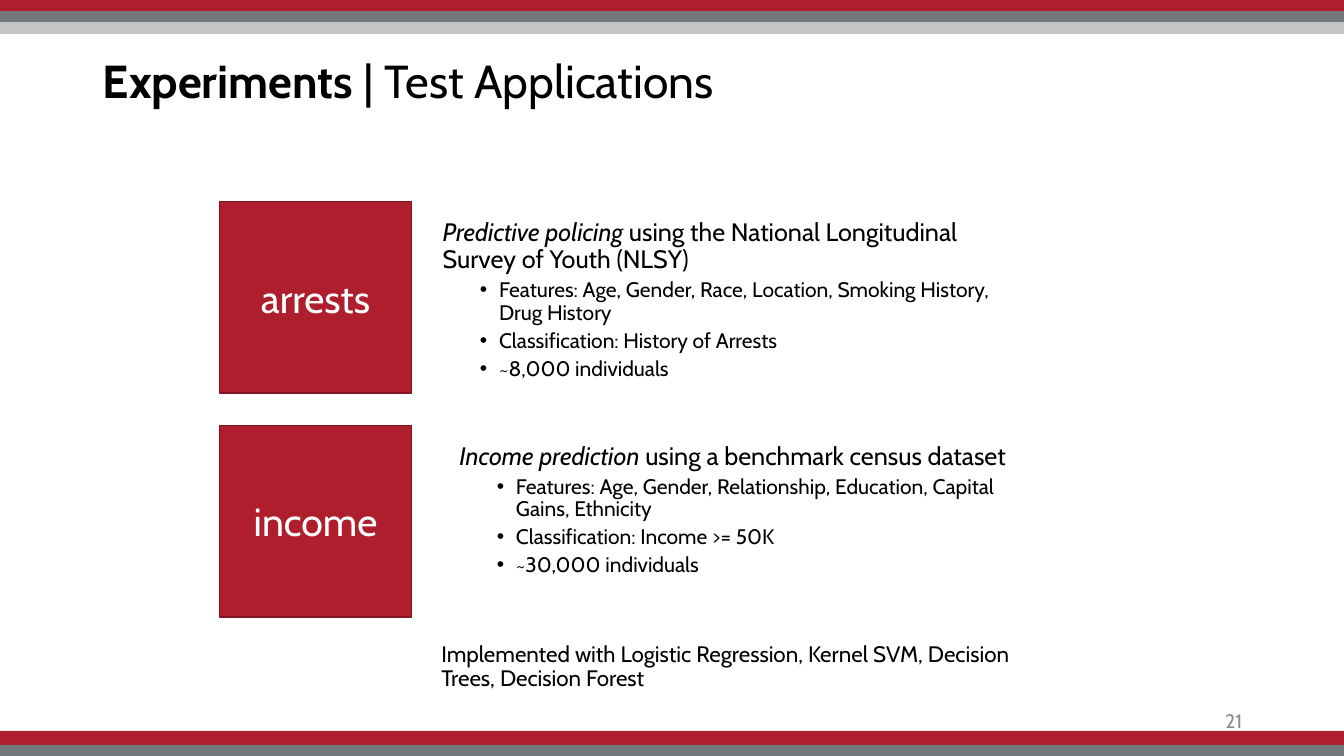
from dataclasses import dataclass

from lxml.etree import SubElement
from pptx import Presentation
from pptx.dml.color import RGBColor as Color
from pptx.enum.shapes import MSO_SHAPE as Preset
from pptx.enum.text import MSO_ANCHOR as Anchor, MSO_AUTO_SIZE as AutoSize, PP_ALIGN as Align
from pptx.oxml.ns import qn
from pptx.util import Inches, Pt


@dataclass(frozen=True)
class Theme:
    font: str = "Cabin"
    red: str = "AF1E2D"
    dark_red: str = "811621"
    gray: str = "75787B"
    light_gray: str = "C5C5C5"
    number_gray: str = "8C8C8C"
    black: str = "000000"
    white: str = "FFFFFF"
    title: int = 33
    card: int = 28
    lead: int = 18
    note: int = 16
    bullet: int = 15
    number: int = 14


class SlideBuilder:
    """Places elements on a grid of 100 columns by 100 rows."""

    def __init__(self, presentation, theme):
        self.theme = theme
        self.column = presentation.slide_width / 100
        self.row = presentation.slide_height / 100
        self.slide = presentation.slides.add_slide(presentation.slide_layouts[1])

    def box(self, left, top, width, height):
        return (round(left * self.column), round(top * self.row),
                round(width * self.column), round(height * self.row))

    def style(self, paragraph, size, color, align=Align.LEFT, spacing=None, before=0):
        font = paragraph.font
        font.name, font.size = self.theme.font, Pt(size)
        font.color.rgb = Color.from_string(color)
        paragraph.alignment = align
        paragraph.line_spacing = spacing
        paragraph.space_before = Pt(before)

    def emphasis(self, paragraph, strong, rest, attribute):
        for text, value in ((strong, True), (rest, False)):
            run = paragraph.add_run()
            run.text = text
            setattr(run.font, attribute, value)

    def rectangle(self, area, fill, line=None):
        shape = self.slide.shapes.add_shape(Preset.RECTANGLE, *self.box(*area))
        shape.shadow.inherit = False
        shape.fill.solid()
        shape.fill.fore_color.rgb = Color.from_string(fill)
        if line:
            shape.line.color.rgb = Color.from_string(line)
            shape.line.width = Pt(1)
        else:
            shape.line.fill.background()
        return shape

    def card(self, area, text):
        shape = self.rectangle(area, self.theme.red, self.theme.dark_red)
        frame = shape.text_frame
        frame.vertical_anchor = Anchor.MIDDLE
        frame.text = text
        self.style(frame.paragraphs[0], self.theme.card, self.theme.white, Align.CENTER)

    def placeholder(self, index, area):
        shape = self.slide.placeholders[index]
        shape.left, shape.top, shape.width, shape.height = self.box(*area)
        shape.text_frame.auto_size = AutoSize.NONE
        return shape.text_frame

    def text_box(self, area):
        frame = self.slide.shapes.add_textbox(*self.box(*area)).text_frame
        frame.word_wrap = True
        return frame

    def title(self, area, strong, rest):
        frame = self.placeholder(0, area)
        frame.vertical_anchor = Anchor.MIDDLE
        paragraph = frame.paragraphs[0]
        self.emphasis(paragraph, strong, rest, "bold")
        self.style(paragraph, self.theme.title, self.theme.black, spacing=0.9)

    def label(self, area, text, size, color, anchor=Anchor.TOP, **layout):
        frame = self.text_box(area)
        frame.vertical_anchor = anchor
        frame.text = text
        self.style(frame.paragraphs[0], size, color, **layout)

    def indent(self, paragraph, margin, hanging=0, bullet=None):
        properties = paragraph._p.get_or_add_pPr()
        properties.set("marL", str(Inches(margin)))
        properties.set("indent", str(Inches(-hanging)))
        if bullet:
            SubElement(properties, qn("a:buFont"), typeface="Arial")
            SubElement(properties, qn("a:buChar"), char=bullet)
        else:
            SubElement(properties, qn("a:buNone"))

    def description(self, frame, strong, rest, bullets):
        lead = frame.paragraphs[0]
        self.emphasis(lead, strong, rest, "italic")
        lead.level = 1
        self.indent(lead, 0.38)
        self.style(lead, self.theme.lead, self.theme.black, spacing=0.9, before=3.8)
        for text in bullets:
            paragraph = frame.add_paragraph()
            paragraph.text = text
            paragraph.level = 2
            self.indent(paragraph, 0.94, 0.19, "•")
            self.style(paragraph, self.theme.bullet, self.theme.black, spacing=0.9, before=3.8)


def main():
    presentation = Presentation()
    presentation.slide_width, presentation.slide_height = Inches(13.33), Inches(7.5)
    theme = Theme()
    builder = SlideBuilder(presentation, theme)

    # Stripes along the top and bottom edges
    stripes = ((0, 1.47, theme.red), (1.47, 1.46, theme.gray), (2.93, 1.6, theme.light_gray),
               (96.67, 1.86, theme.red), (98.53, 1.47, theme.gray))
    for top, height, color in stripes:
        builder.rectangle((0, top, 100, height), color)

    # Title
    builder.title((6.9, 1.33, 86.25, 19.33), "Experiments", " | Test Applications")

    # Application cards, one row pitch apart
    pitch = 29.6
    for index, name in enumerate(("arrests", "income")):
        builder.card((16.35, 26.67 + index * pitch, 14.25, 25.33), name)

    # Descriptions beside the cards
    text_top = 28.4
    builder.description(
        builder.placeholder(1, (29.33, text_top, 48.39, 23.47)),
        "Predictive policing", " using the National Longitudinal Survey of Youth (NLSY)",
        ("Features: Age, Gender, Race, Location, Smoking History, Drug History",
         "Classification: History of Arrests",
         "~8,000 individuals"))
    builder.description(
        builder.text_box((30.6, text_top + pitch, 48.39, 21.73)),
        "Income prediction", " using a benchmark census dataset",
        ("Features: Age, Gender, Relationship, Education, Capital Gains, Ethnicity",
         "Classification: Income >= 50K",
         "~30,000 individuals"))

    # Closing note and slide number
    builder.label((32.1, 84.4, 46.9, 8.27),
                  "Implemented with Logistic Regression, Kernel SVM, Decision Trees, Decision Forest",
                  theme.note, theme.black, spacing=0.9, before=7.5)
    builder.label((70.67, 92.67, 22.5, 5.33), "21", theme.number, theme.number_gray,
                  Anchor.MIDDLE, align=Align.RIGHT)

    presentation.save("out.pptx")


if __name__ == "__main__":
    main()
